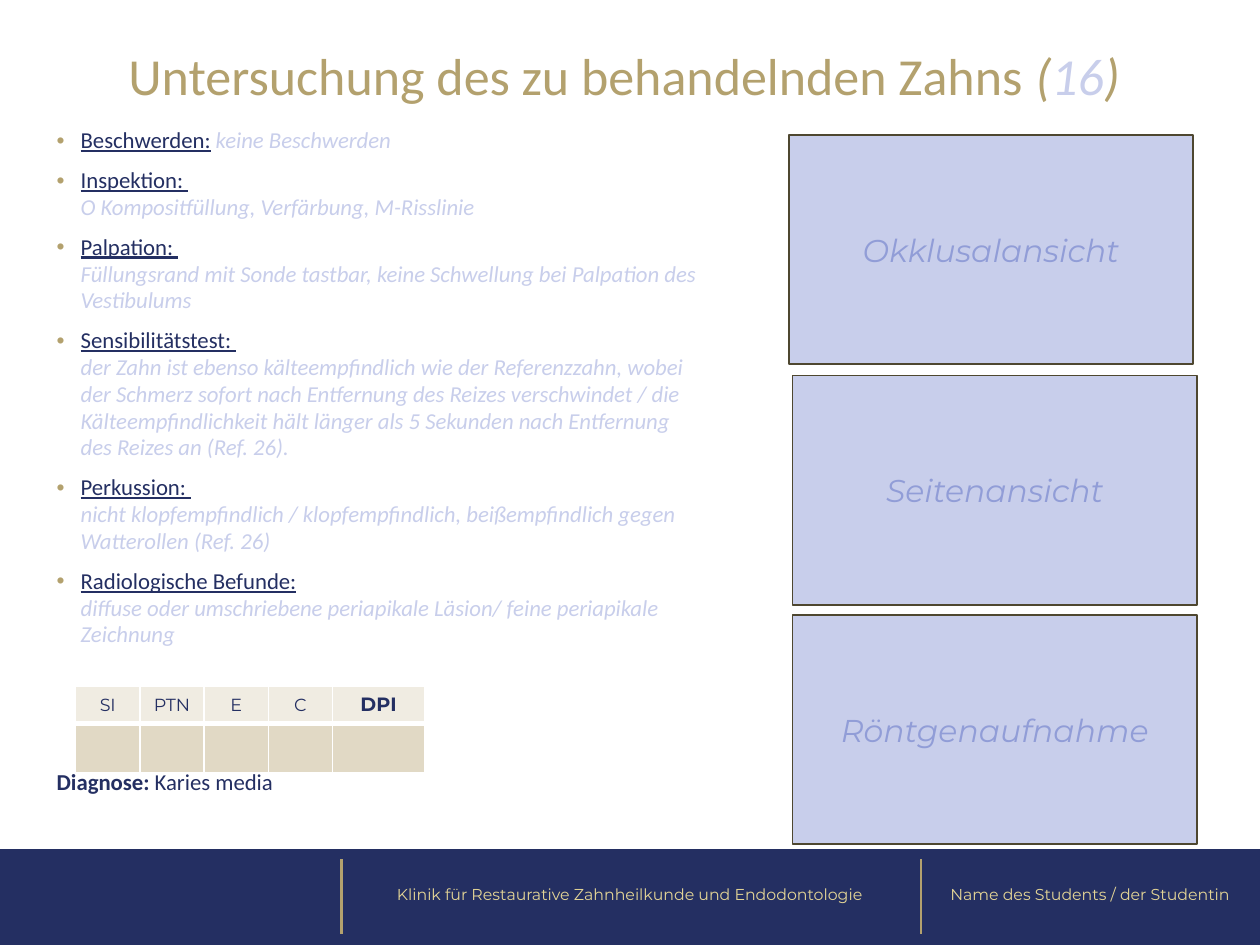
from dataclasses import dataclass

from lxml.etree import SubElement
from pptx import Presentation
from pptx.dml.color import RGBColor
from pptx.enum.shapes import MSO_CONNECTOR as Line, MSO_SHAPE as Preset
from pptx.enum.text import MSO_ANCHOR as Anchor, MSO_AUTO_SIZE as AutoSize, PP_ALIGN as Align
from pptx.oxml.ns import qn
from pptx.util import Inches, Pt


@dataclass(frozen=True)
class Theme:
    navy: str = "242F62"
    gold: str = "B3A16E"
    pale_gold: str = "E3D496"
    lilac: str = "C8CEEB"
    violet: str = "919DD7"
    frame: str = "4E4730"
    header_fill: str = "F0ECE2"
    value_fill: str = "E1D9C5"
    white: str = "FFFFFF"
    text_font: str = "Calibri"
    label_font: str = "Montserrat"
    title_size: float = 29.7
    view_size: float = 18
    body_size: float = 13
    index_size: float = 10
    total_size: float = 11
    footer_size: float = 9


@dataclass(frozen=True)
class Finding:
    label: str
    result: str
    new_line: bool = True


@dataclass(frozen=True)
class View:
    label: str
    left: float
    top: float


@dataclass(frozen=True)
class FooterField:
    wording: str
    left: float
    width: float


THEME = Theme()
FINDINGS = [
    Finding("Beschwerden:", " keine Beschwerden", new_line=False),
    Finding("Inspektion: ", "O Kompositfüllung, Verfärbung, M-Risslinie"),
    Finding("Palpation: ", "Füllungsrand mit Sonde tastbar, keine Schwellung bei "
            "Palpation des Vestibulums"),
    Finding("Sensibilitätstest: ", "der Zahn ist ebenso kälteempfindlich wie der Referenzzahn, "
            "wobei der Schmerz sofort nach Entfernung des Reizes verschwindet / die "
            "Kälteempfindlichkeit hält länger als 5 Sekunden nach Entfernung des Reizes an "
            "(Ref. 26)."),
    Finding("Perkussion: ", "nicht klopfempfindlich / klopfempfindlich, beißempfindlich "
            "gegen Watterollen (Ref. 26)"),
    Finding("Radiologische Befunde:", "diffuse oder umschriebene periapikale Läsion/ feine "
            "periapikale Zeichnung"),
]
VIEWS = [
    View("Okklusalansicht", 6.26, 1.07),
    View("Seitenansicht", 6.29, 2.98),
    View("Röntgenaufnahme", 6.29, 4.88),
]
FOOTER_FIELDS = [
    FooterField("Klinik für Restaurative Zahnheilkunde und Endodontologie", 2.69, 4.61),
    FooterField("Name des Students / der Studentin", 7.3, 2.7),
]
INDEX_WIDTHS = {"SI": 0.51, "PTN": 0.51, "E": 0.51, "C": 0.51, "DPI": 0.73}


def rgb(color: str) -> RGBColor:
    return RGBColor.from_string(color)


def add_text(paragraph, wording: str, *, size: float, color: str, font: str = THEME.text_font,
             bold: bool = False, italic: bool = False, underline: bool = False) -> None:
    run = paragraph.add_run()
    run.text = wording
    run.font.name, run.font.size = font, Pt(size)
    run.font.color.rgb = rgb(color)
    run.font.bold, run.font.italic, run.font.underline = bold, italic, underline


def place(shape, left: float, top: float, width: float, height: float) -> None:
    shape.left, shape.top = Inches(left), Inches(top)
    shape.width, shape.height = Inches(width), Inches(height)


def add_rectangle(slide, left: float, top: float, width: float, height: float, fill: str):
    rectangle = slide.shapes.add_shape(Preset.RECTANGLE, Inches(left), Inches(top),
                                       Inches(width), Inches(height))
    rectangle.shadow.inherit = False
    rectangle.fill.solid()
    rectangle.fill.fore_color.rgb = rgb(fill)
    rectangle.line.fill.background()
    return rectangle


def add_divider(slide, x: float) -> None:
    divider = slide.shapes.add_connector(Line.STRAIGHT, Inches(x), Inches(6.82),
                                         Inches(x), Inches(7.41))
    divider.line.color.rgb = rgb(THEME.gold)
    divider.line.width = Pt(1.5)
    SubElement(divider._element.spPr, qn("a:effectLst"))


def add_footer(slide) -> None:
    add_rectangle(slide, 0, 6.74, 10, 0.76, THEME.navy)
    for x in (2.71, 7.31):
        add_divider(slide, x)
    for field in FOOTER_FIELDS:
        box = slide.shapes.add_textbox(Inches(field.left), Inches(6.71),
                                       Inches(field.width), Inches(0.79))
        box.text_frame.word_wrap = True
        box.text_frame.vertical_anchor = Anchor.MIDDLE
        paragraph = box.text_frame.paragraphs[0]
        paragraph.alignment, paragraph.line_spacing = Align.CENTER, 0.9
        add_text(paragraph, field.wording, size=THEME.footer_size, color=THEME.pale_gold,
                 font=THEME.label_font)


def add_view(slide, view: View) -> None:
    panel = add_rectangle(slide, view.left, view.top, 3.21, 1.82, THEME.lilac)
    panel.line.color.rgb = rgb(THEME.frame)
    panel.line.width = Pt(1)
    panel.text_frame.vertical_anchor = Anchor.MIDDLE
    paragraph = panel.text_frame.paragraphs[0]
    paragraph.alignment = Align.CENTER
    add_text(paragraph, view.label, size=THEME.view_size, color=THEME.violet,
             font=THEME.label_font, italic=True)


def fill_title(title) -> None:
    place(title, 0.69, 0.17, 8.62, 0.91)
    frame = title.text_frame
    frame.auto_size, frame.vertical_anchor = AutoSize.NONE, Anchor.MIDDLE
    paragraph = frame.paragraphs[0]
    paragraph.alignment, paragraph.line_spacing = Align.CENTER, 0.9
    for wording, color, italic in (("Untersuchung des zu behandelnden Zahns ", THEME.gold, False),
                                   ("(", THEME.gold, True), ("16", THEME.lilac, True),
                                   (") ", THEME.gold, True)):
        add_text(paragraph, wording, size=THEME.title_size, color=color, italic=italic)


def set_bullet(paragraph, bullet: str = "") -> None:
    """Give the paragraph a hanging gold bullet, or none and no indent."""
    indent = Inches(0.19) if bullet else 0
    properties = paragraph._p.get_or_add_pPr()
    properties.set("marL", str(indent))
    properties.set("indent", str(-indent))
    if bullet:
        bullet_color = SubElement(properties, qn("a:buClr"))
        SubElement(bullet_color, qn("a:srgbClr"), val=THEME.gold)
        SubElement(properties, qn("a:buFont"), typeface="Arial")
        SubElement(properties, qn("a:buChar"), char=bullet)
    else:
        SubElement(properties, qn("a:buNone"))


def fill_findings(body) -> None:
    place(body, 0.35, 0.96, 5.28, 5.74)
    frame = body.text_frame
    frame.auto_size, frame.vertical_anchor = AutoSize.NONE, Anchor.TOP
    size = THEME.body_size
    for number, finding in enumerate(FINDINGS):
        paragraph = frame.add_paragraph() if number else frame.paragraphs[0]
        set_bullet(paragraph, "•")
        paragraph.line_spacing = 0.98
        paragraph.space_before = Pt(7.5 if number else 0)
        add_text(paragraph, finding.label, size=size, color=THEME.navy, underline=True)
        if finding.new_line:
            paragraph.add_line_break()
            SubElement(paragraph._p.find(qn("a:br")), qn("a:rPr"), sz=str(int(size * 100)))
        add_text(paragraph, finding.result, size=size, color=THEME.lilac, italic=True)
    diagnosis = frame.add_paragraph()
    set_bullet(diagnosis)
    diagnosis.line_spacing, diagnosis.space_before = 0.98, Pt(69)
    add_text(diagnosis, "Diagnose: ", size=size, color=THEME.navy, bold=True)
    add_text(diagnosis, "Karies media", size=size, color=THEME.navy)


def style_cell(cell, fill: str, bottom_width: float) -> None:
    properties = cell._tc.get_or_add_tcPr()
    for side, width in (("L", 1), ("R", 1), ("T", 1), ("B", bottom_width)):
        border = SubElement(properties, qn(f"a:ln{side}"), w=str(Pt(width)))
        SubElement(SubElement(border, qn("a:solidFill")), qn("a:srgbClr"), val=THEME.white)
    cell.fill.solid()
    cell.fill.fore_color.rgb = rgb(fill)
    cell.vertical_anchor = Anchor.MIDDLE
    cell.margin_top = cell.margin_bottom = Inches(0.02)


def add_index_table(slide) -> None:
    table = slide.shapes.add_table(2, len(INDEX_WIDTHS), Inches(0.6), Inches(5.45),
                                   Inches(sum(INDEX_WIDTHS.values())), Inches(0.68)).table
    table.rows[0].height, table.rows[1].height = Inches(0.29), Inches(0.39)
    for column, (index, width) in enumerate(INDEX_WIDTHS.items()):
        table.columns[column].width = Inches(width)
        header = table.cell(0, column)
        style_cell(header, THEME.header_fill, 3)
        style_cell(table.cell(1, column), THEME.value_fill, 1)
        is_total = index == "DPI"
        paragraph = header.text_frame.paragraphs[0]
        paragraph.alignment = Align.CENTER
        add_text(paragraph, index, size=THEME.total_size if is_total else THEME.index_size,
                 color=THEME.navy, font=THEME.label_font, bold=is_total)


def main() -> None:
    deck = Presentation()
    deck.slide_width, deck.slide_height = Inches(10), Inches(7.5)
    slide = deck.slides.add_slide(deck.slide_layouts[1])
    fill_title(slide.shapes.title)
    fill_findings(slide.placeholders[1])
    add_footer(slide)
    add_index_table(slide)
    for view in VIEWS:
        add_view(slide, view)
    deck.save("out.pptx")


if __name__ == "__main__":
    main()
